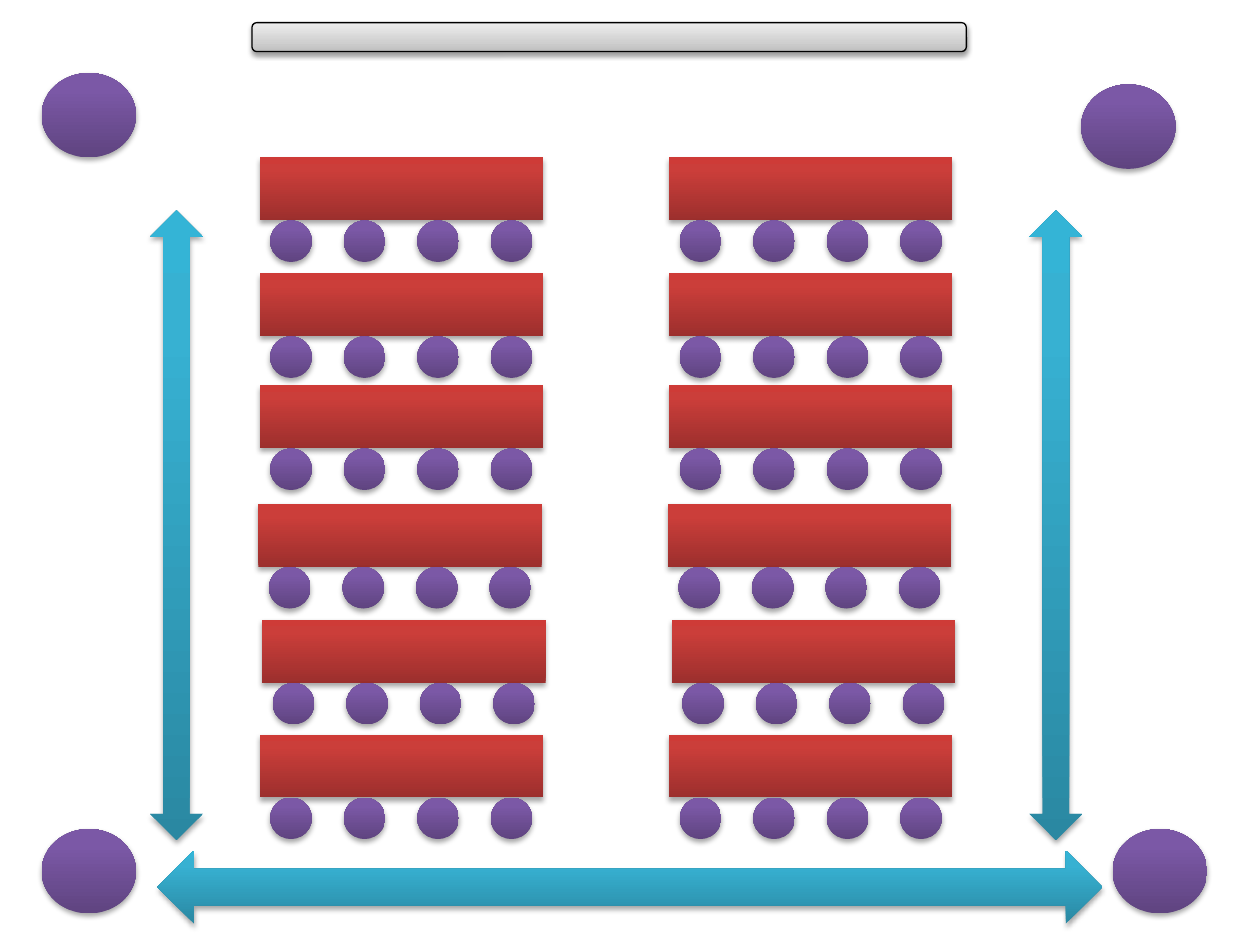
from lxml.etree import SubElement
from pptx import Presentation
from pptx.dml.color import RGBColor
from pptx.enum.shapes import MSO_SHAPE
from pptx.oxml.ns import qn
from pptx.util import Inches, Pt

# Gradient stops run from bottom to top: (percent, colour)
THEME = {
    "aisle": [(0, "2A88A2"), (80, "37B1D2"), (100, "34B4D6")],
    "board": [(0, "BDBDBD"), (35, "D1D1D1"), (100, "EEEEEE")],
    "person": [(0, "5F4480"), (80, "7B58A6"), (100, "7C57A8")],
    "table": [(0, "9C2F2D"), (80, "CB3E3A"), (100, "CE3B37")],
    "line": "000000",
    "line_width": 0.75,
    "shadow": "000000",
}

# (preset, theme fill, left, top, width, height)
AISLES_AND_BOARD = [
    (MSO_SHAPE.LEFT_RIGHT_ARROW, "aisle", 1.25, 6.75, 7.5, 0.58),
    (MSO_SHAPE.UP_DOWN_ARROW, "aisle", 1.19, 1.67, 0.42, 5),
    (MSO_SHAPE.UP_DOWN_ARROW, "aisle", 8.17, 1.67, 0.42, 5),
    (MSO_SHAPE.ROUNDED_RECTANGLE, "board", 2, 0.18, 5.67, 0.23),
]
HELPERS = [(0.33, 0.58), (8.58, 0.67), (0.33, 6.58), (8.83, 6.58)]
HELPER_SIZE = (0.75, 0.67)

# Left and top of the first table in each row
ROWS = [(2.06, 1.25), (2.06, 2.17), (2.06, 3.06),
        (2.05, 4), (2.08, 4.92), (2.06, 5.83)]
COLUMNS, COLUMN_PITCH = 2, 3.25
TABLE_W, TABLE_H = 2.25, 0.5
SEATS, SEAT_SIZE = 4, 0.33
SEAT_PITCH = 7 / 12
SEAT_MARGIN = (TABLE_W - SEAT_SIZE - (SEATS - 1) * SEAT_PITCH) / 2


def add_color(parent, tag, color, **attrs):
    """Add an element with an RGB colour inside it and return the colour."""
    el = SubElement(parent, qn(tag), {k: str(v) for k, v in attrs.items()})
    return SubElement(el, qn("a:srgbClr"), val=color)


def set_gradient(sp, stops):
    sp.fill.gradient()
    sp.fill.gradient_angle = 90
    stop_list = sp._element.spPr.find(".//" + qn("a:gsLst"))
    for stop in list(stop_list):
        stop_list.remove(stop)
    for percent, color in stops:
        add_color(stop_list, "a:gs", color, pos=percent * 1000)


def set_shadow(sp, opacity, distance):
    sp.shadow.inherit = False
    effects = sp._element.spPr.find(qn("a:effectLst"))
    color = add_color(effects, "a:outerShdw", THEME["shadow"], blurRad=Pt(3.1),
                      dist=Pt(distance), dir=90 * 60000, rotWithShape=0)
    SubElement(color, qn("a:alpha"), val=str(opacity * 1000))


def add_item(shapes, preset, kind, left, top, width, height):
    sp = shapes.add_shape(preset, Inches(left), Inches(top),
                          Inches(width), Inches(height))
    set_gradient(sp, THEME[kind])
    if kind == "board":
        sp.line.color.rgb = RGBColor.from_string(THEME["line"])
        sp.line.width = Pt(THEME["line_width"])
        set_shadow(sp, 38, 1.6)
    else:
        sp.line.fill.background()
        set_shadow(sp, 35, 1.8)
    return sp


def add_seated_table(shapes, left, top):
    """Group one table with the row of seats below it."""
    group = shapes.add_group_shape().shapes
    add_item(group, MSO_SHAPE.RECTANGLE, "table", left, top, TABLE_W, TABLE_H)
    for i in range(SEATS):
        add_item(group, MSO_SHAPE.OVAL, "person",
                 left + SEAT_MARGIN + i * SEAT_PITCH, top + TABLE_H,
                 SEAT_SIZE, SEAT_SIZE)


def main():
    prs = Presentation()
    prs.slide_width, prs.slide_height = Inches(10), Inches(7.5)
    shapes = prs.slides.add_slide(prs.slide_layouts[6]).shapes
    for item in AISLES_AND_BOARD:
        add_item(shapes, *item)
    for left, top in HELPERS:
        add_item(shapes, MSO_SHAPE.OVAL, "person", left, top, *HELPER_SIZE)
    for left, top in ROWS:
        for column in range(COLUMNS):
            add_seated_table(shapes, left + column * COLUMN_PITCH, top)
    prs.save("out.pptx")


if __name__ == "__main__":
    main()
